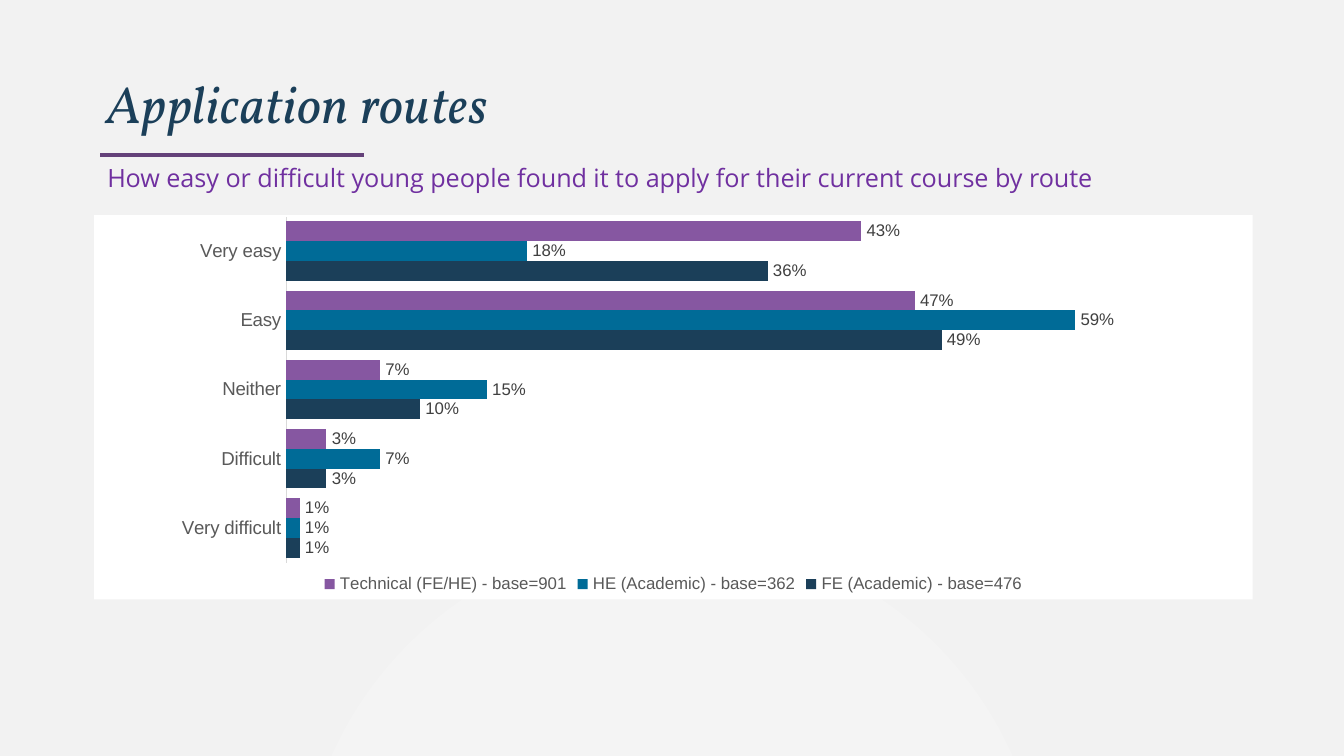
"""Build the application routes slide with a clustered bar chart by route."""
from dataclasses import dataclass

from lxml import etree
from pptx import Presentation
from pptx import util as u
from pptx.chart.data import CategoryChartData
from pptx.dml.color import RGBColor
from pptx.enum import chart as charts, shapes, text
from pptx.oxml import parse_xml
from pptx.oxml.ns import nsdecls, qn

TITLE = "Application routes"
SUBTITLE = "How easy or difficult young people found it to apply for their current course by route"
CATEGORIES = ["Very difficult", "Difficult", "Neither", "Easy", "Very easy"]
SERIES = [
    ("FE (Academic) - base=476", [0.01, 0.03, 0.10, 0.49, 0.36], "1B3F59"),
    ("HE (Academic) - base=362", [0.01, 0.07, 0.15, 0.59, 0.18], "006B97"),
    ("Technical (FE/HE) - base=901", [0.01, 0.03, 0.07, 0.47, 0.43], "8657A1"),
]
PLOT_AREA = {"x": 0.166, "y": 0.004, "w": 0.808, "h": 0.901}
PERCENT = "###0%"

WIDTH = 10
HEIGHT = WIDTH * 9 / 16
MARGIN = 0.69
CONTENT_WIDTH = WIDTH - 2 * MARGIN
CIRCLE = 5.55


@dataclass(frozen=True)
class Theme:
    """Colours, fonts and type sizes."""

    background: str = "F2F2F2"
    circle: str = "F4F4F4"
    title: str = "1B3F59"
    rule: str = "644179"
    subtitle: str = "7030A0"
    panel: str = "FFFFFF"
    text: str = "000000"
    axis_text: str = "595959"
    label_text: str = "404040"
    axis_line: str = "D9D9D9"
    title_font: str = "Vollkorn"
    body_font: str = "Open Sans"
    chart_font: str = "Arial"
    title_size: float = 28
    subtitle_size: float = 13.5
    axis_size: float = 10
    label_size: float = 9


THEME = Theme()


def style_font(font, name, size, color):
    font.name, font.size = name, u.Pt(size)
    font.color.rgb = RGBColor.from_string(color)


def fill_solid(fill, color):
    fill.solid()
    fill.fore_color.rgb = RGBColor.from_string(color)


def box(left, top, width, height):
    return [u.Inches(length) for length in (left, top, width, height)]


def add_plain_shape(slide, kind, place, color):
    shape = slide.shapes.add_shape(kind, *box(*place))
    shape.shadow.inherit = False
    fill_solid(shape.fill, color)
    shape.line.fill.background()
    return shape


def add_title(slide):
    title = slide.shapes.title
    title.left, title.top, title.width, title.height = box(MARGIN, 0.04, CONTENT_WIDTH, 1.01)
    frame = title.text_frame
    frame.text = TITLE
    frame.auto_size = text.MSO_AUTO_SIZE.NONE
    frame.vertical_anchor = text.MSO_ANCHOR.BOTTOM
    paragraph = frame.paragraphs[0]
    paragraph.alignment = text.PP_ALIGN.LEFT
    paragraph.line_spacing = 0.9
    style_font(paragraph.font, THEME.title_font, THEME.title_size, THEME.title)
    paragraph.font.italic = True
    paragraph.runs[0].font._element.set("spc", "50")


def add_decoration(slide):
    circle = add_plain_shape(slide, shapes.MSO_SHAPE.OVAL,
                             ((WIDTH - CIRCLE) / 2, 3.98, CIRCLE, CIRCLE), THEME.circle)
    slide.shapes.title.element.addprevious(circle.element)
    rule = add_plain_shape(slide, shapes.MSO_SHAPE.MATH_MINUS, (0.4, 1.13, 2.65, 0.05), THEME.rule)
    fill_solid(rule.line.fill, THEME.rule)
    rule.line.width = u.Pt(1)
    etree.SubElement(rule.element.spPr.find(qn("a:ln")), qn("a:miter")).set("lim", "800000")


def add_subtitle(slide):
    frame = slide.shapes.add_textbox(*box(0.7, 1.16, 8.46, 0.33)).text_frame
    frame.word_wrap = True
    frame.auto_size = text.MSO_AUTO_SIZE.SHAPE_TO_FIT_TEXT
    frame.text = SUBTITLE
    style_font(frame.paragraphs[0].font, THEME.body_font, THEME.subtitle_size, THEME.subtitle)


def set_plot_area(chart):
    plot_area = chart.plots[0]._element.getparent()
    for layout in plot_area.findall(qn("c:layout")):
        plot_area.remove(layout)
    layout = parse_xml(f"<c:layout {nsdecls('c')}><c:manualLayout/></c:layout>")
    settings = {"layoutTarget": "inner", "xMode": "edge", "yMode": "edge", **PLOT_AREA}
    for name, value in settings.items():
        etree.SubElement(layout[0], qn(f"c:{name}")).set("val", str(value))
    plot_area.insert(0, layout)


def set_panel(chart):
    panel = parse_xml(
        f"<c:spPr {nsdecls('c', 'a')}><a:solidFill><a:srgbClr val='{THEME.panel}'/></a:solidFill>"
        "<a:ln><a:noFill/></a:ln></c:spPr>")
    chart.element.find(qn("c:chart")).addnext(panel)


def add_chart(slide):
    data = CategoryChartData(number_format=PERCENT)
    data.categories = CATEGORIES
    for name, values, _ in SERIES:
        data.add_series(name, values)
    chart = slide.shapes.add_chart(charts.XL_CHART_TYPE.BAR_CLUSTERED,
                                   *box(0.7, 1.6, CONTENT_WIDTH, 2.86), data).chart
    style_font(chart.font, THEME.body_font, THEME.axis_size, THEME.text)
    chart.has_title = False
    chart.has_legend = True
    chart.legend.position = charts.XL_LEGEND_POSITION.BOTTOM
    chart.legend.include_in_layout = False
    style_font(chart.legend.font, THEME.chart_font, THEME.label_size, THEME.axis_text)

    category_axis, value_axis = chart.category_axis, chart.value_axis
    category_axis.major_tick_mark = charts.XL_TICK_MARK.NONE
    style_font(category_axis.tick_labels.font, THEME.chart_font, THEME.axis_size, THEME.axis_text)
    fill_solid(category_axis.format.line.fill, THEME.axis_line)
    category_axis.format.line.width = u.Pt(0.75)
    value_axis.minimum_scale, value_axis.maximum_scale = 0, 0.7
    value_axis.has_major_gridlines = False
    value_axis.tick_labels.number_format = PERCENT
    value_axis.tick_labels.number_format_is_linked = False
    value_axis.visible = False

    plot = chart.plots[0]
    plot.gap_width, plot.overlap, plot.vary_by_categories = 50, 0, False
    for series, (_, _, color) in zip(plot.series, SERIES):
        fill_solid(series.format.fill, color)
        labels = series.data_labels
        labels.show_value = True
        labels.position = charts.XL_LABEL_POSITION.OUTSIDE_END
        labels.number_format, labels.number_format_is_linked = PERCENT, False
        style_font(labels.font, THEME.chart_font, THEME.label_size, THEME.label_text)
    set_plot_area(chart)
    set_panel(chart)


def main():
    presentation = Presentation()
    presentation.slide_width, presentation.slide_height = u.Inches(WIDTH), u.Inches(HEIGHT)
    slide = presentation.slides.add_slide(presentation.slide_layouts.get_by_name("Title Only"))
    fill_solid(slide.background.fill, THEME.background)
    add_title(slide)
    add_decoration(slide)
    add_subtitle(slide)
    add_chart(slide)
    presentation.save("out.pptx")


if __name__ == "__main__":
    main()
